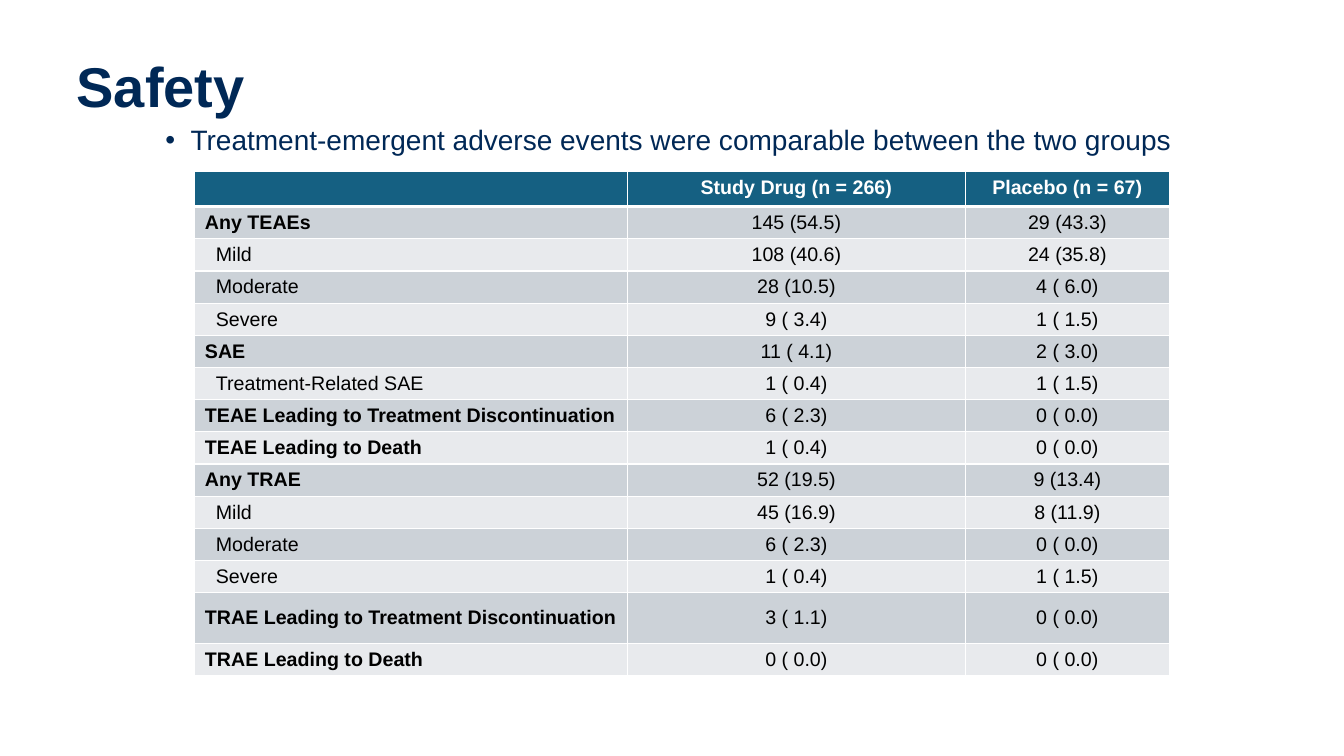
"""Builds the safety slide: a headline, one bullet and a table of adverse events."""
import pptx
import pptx.dml.color
import pptx.enum.text
import pptx.oxml
import pptx.oxml.ns
import pptx.util
from dataclasses import dataclass

Pt = pptx.util.Pt
Align = pptx.enum.text.PP_ALIGN
Anchor = pptx.enum.text.MSO_ANCHOR

HEADLINE = "Safety"
FINDING = "Treatment-emergent adverse events were comparable between the two groups"
GROUPS = ("", "Study Drug (n = 266)", "Placebo (n = 67)")
MAIN, SUB = 0, 1
EVENTS = [
    (MAIN, "Any TEAEs", "145 (54.5)", "29 (43.3)"),
    (SUB, "Mild", "108 (40.6)", "24 (35.8)"),
    (SUB, "Moderate", "28 (10.5)", "4 ( 6.0)"),
    (SUB, "Severe", "9 ( 3.4)", "1 ( 1.5)"),
    (MAIN, "SAE", "11 ( 4.1)", "2 ( 3.0)"),
    (SUB, "Treatment-Related SAE", "1 ( 0.4)", "1 ( 1.5)"),
    (MAIN, "TEAE Leading to Treatment Discontinuation", "6 ( 2.3)", "0 ( 0.0)"),
    (MAIN, "TEAE Leading to Death", "1 ( 0.4)", "0 ( 0.0)"),
    (MAIN, "Any TRAE", "52 (19.5)", "9 (13.4)"),
    (SUB, "Mild", "45 (16.9)", "8 (11.9)"),
    (SUB, "Moderate", "6 ( 2.3)", "0 ( 0.0)"),
    (SUB, "Severe", "1 ( 0.4)", "1 ( 1.5)"),
    (MAIN, "TRAE Leading to Treatment Discontinuation", "3 ( 1.1)", "0 ( 0.0)"),
    (MAIN, "TRAE Leading to Death", "0 ( 0.0)", "0 ( 0.0)"),
]

SLIDE_SIZE = (960, 540)
HEADLINE_BOX = (47.5, 28.8, 167, 69.8)
FINDING_BOX = (110.9, 86.4, 770.4, 35.3)
TABLE_CORNER = (139.2, 122.6)
COLUMN_WIDTHS = (309, 241.4, 145.7)
HEADER_HEIGHT, EVENT_HEIGHT, TALL_HEIGHT = 25, 23, 36
TALL_EVENT = 12
BULLET_INDENT = 18
LABEL_MARGINS = {MAIN: 7.2, SUB: 15}
THIN, THICK = 1, 3


@dataclass(frozen=True)
class Theme:
    """Colours, font and type sizes of the slide."""
    font: str = "Arial"
    navy: str = "002856"
    teal: str = "156082"
    bands: tuple = ("CCD2D8", "E8EAED")
    white: str = "FFFFFF"
    black: str = "000000"
    headline: int = 40
    finding: int = 20
    table: int = 14


THEME = Theme()


def rgb(value):
    """Turns a hex string into a colour."""
    return pptx.dml.color.RGBColor.from_string(value)


def style(paragraph, size, color, bold=False):
    """Sets the font of a whole paragraph."""
    font = paragraph.font
    font.name, font.size, font.bold = THEME.font, Pt(size), bold
    font.color.rgb = rgb(color)


def fill_placeholder(placeholder, box, text, anchor):
    """Places a placeholder and returns its only paragraph."""
    placeholder.left, placeholder.top, placeholder.width, placeholder.height = map(Pt, box)
    frame = placeholder.text_frame
    frame.text = text
    frame.word_wrap = True
    frame.auto_size = pptx.enum.text.MSO_AUTO_SIZE.NONE
    frame.vertical_anchor = anchor
    paragraph = frame.paragraphs[0]
    paragraph.alignment = Align.LEFT
    paragraph.line_spacing = 0.9
    paragraph.space_before = Pt(0)
    return paragraph


def add_bullet(paragraph, indent):
    """Gives a paragraph a hanging round bullet."""
    properties = paragraph._p.get_or_add_pPr()
    properties.set("marL", str(Pt(indent)))
    properties.set("indent", str(-Pt(indent)))
    namespace = pptx.oxml.ns.nsdecls("a")
    properties.append(pptx.oxml.parse_xml(f'<a:buFont {namespace} typeface="{THEME.font}"/>'))
    properties.append(pptx.oxml.parse_xml(f'<a:buChar {namespace} char="•"/>'))


def add_borders(cell, top, bottom):
    """Draws white rules on the four sides of a cell."""
    properties = cell._tc.get_or_add_tcPr()
    sides = {"lnL": THIN, "lnR": THIN, "lnT": top, "lnB": bottom}
    for position, (side, width) in enumerate(sides.items()):
        properties.insert(position, pptx.oxml.parse_xml(
            f'<a:{side} {pptx.oxml.ns.nsdecls("a")} w="{Pt(width)}"><a:solidFill>'
            f'<a:srgbClr val="{THEME.white}"/></a:solidFill></a:{side}>'))


def fill_cell(cell, text, fill, color, bold, alignment, top=THIN, bottom=THIN):
    """Writes and colours one cell."""
    cell.text = text
    cell.fill.solid()
    cell.fill.fore_color.rgb = rgb(fill)
    add_borders(cell, top, bottom)
    paragraph = cell.text_frame.paragraphs[0]
    paragraph.alignment = alignment
    style(paragraph, THEME.table, color, bold)


def add_events_table(slide):
    """Adds the table of adverse events by treatment group."""
    heights = [HEADER_HEIGHT] + [EVENT_HEIGHT] * len(EVENTS)
    heights[TALL_EVENT + 1] = TALL_HEIGHT
    size = (sum(COLUMN_WIDTHS), sum(heights))
    table = slide.shapes.add_table(
        len(heights), len(GROUPS), *map(Pt, TABLE_CORNER + size)).table
    for column, width in zip(table.columns, COLUMN_WIDTHS):
        column.width = Pt(width)
    for row, height in zip(table.rows, heights):
        row.height = Pt(height)
    for column, group in enumerate(GROUPS):
        fill_cell(table.cell(0, column), group, THEME.teal, THEME.white, True,
                  Align.CENTER, bottom=THICK)
    for number, (level, *values) in enumerate(EVENTS):
        for column, value in enumerate(values):
            cell = table.cell(number + 1, column)
            is_label = column == 0
            fill_cell(cell, value, THEME.bands[number % 2], THEME.black,
                      is_label and level == MAIN,
                      Align.LEFT if is_label else Align.CENTER,
                      top=THIN if number else THICK)
            cell.vertical_anchor = Anchor.MIDDLE
            cell.margin_top = cell.margin_bottom = Pt(3)
            if is_label:
                cell.margin_left = Pt(LABEL_MARGINS[level])


def main():
    """Builds and saves the slide."""
    deck = pptx.Presentation()
    deck.slide_width, deck.slide_height = map(Pt, SLIDE_SIZE)
    slide = deck.slides.add_slide(deck.slide_layouts[1])
    headline = fill_placeholder(slide.shapes.title, HEADLINE_BOX, HEADLINE, Anchor.MIDDLE)
    style(headline, THEME.headline, THEME.navy, True)
    finding = fill_placeholder(slide.placeholders[1], FINDING_BOX, FINDING, Anchor.TOP)
    add_bullet(finding, BULLET_INDENT)
    style(finding, THEME.finding, THEME.navy)
    add_events_table(slide)
    deck.save("out.pptx")


if __name__ == "__main__":
    main()
